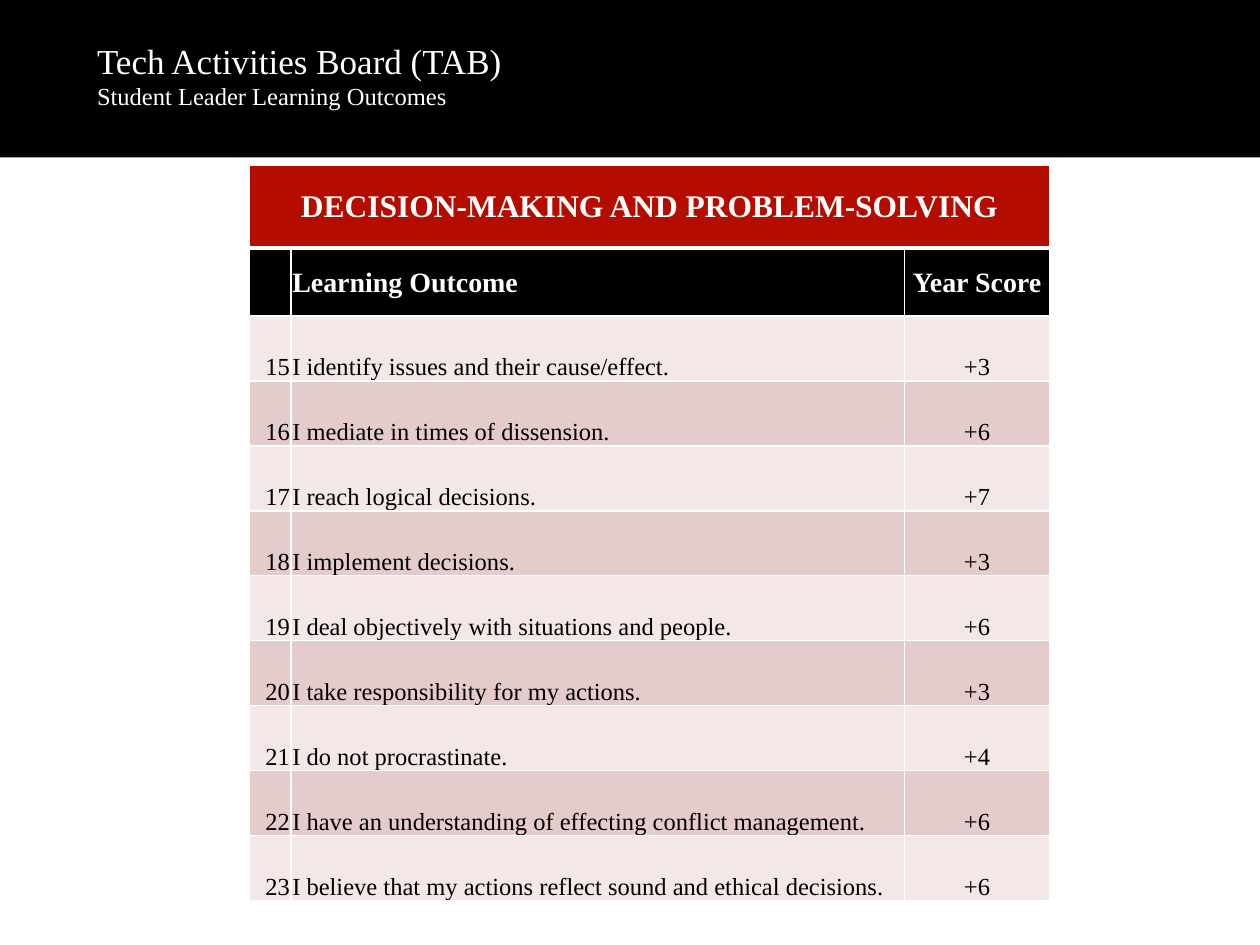
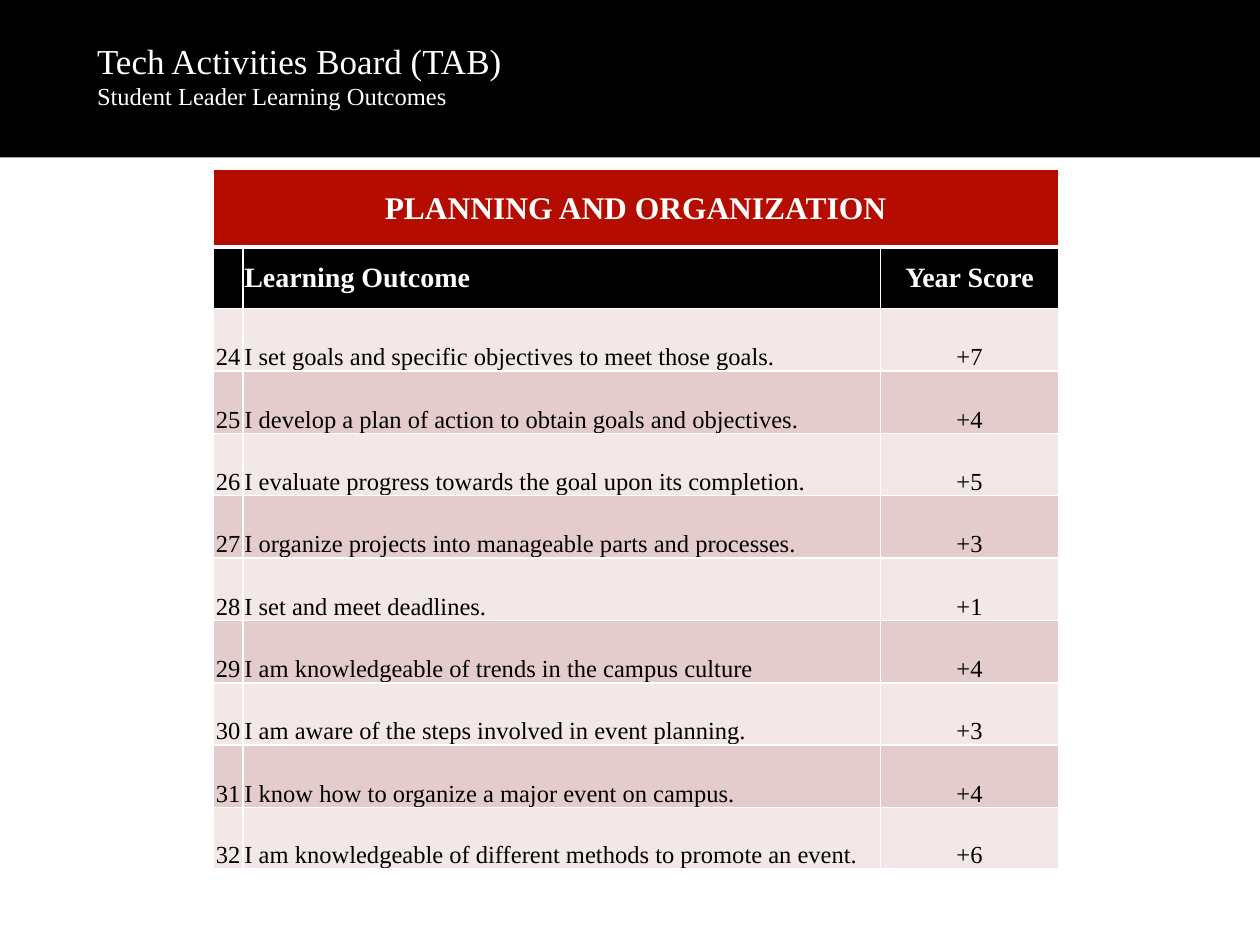
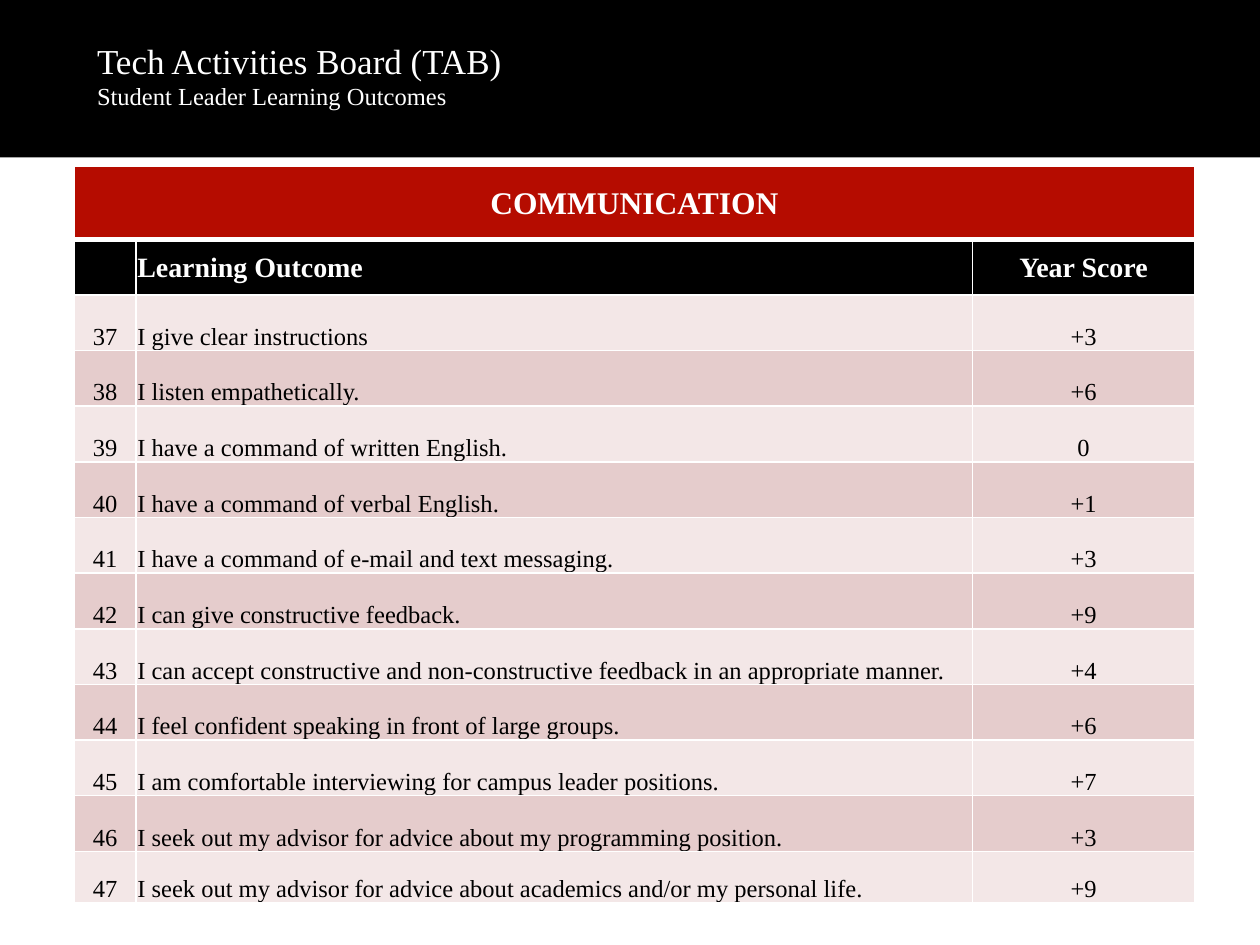
from dataclasses import dataclass
from pptx import Presentation
from pptx.dml.color import RGBColor
from pptx.enum.shapes import MSO_SHAPE
from pptx.enum.text import MSO_ANCHOR, MSO_AUTO_SIZE, PP_ALIGN
from pptx.oxml.ns import qn
from pptx.util import Inches, Pt
from lxml import etree

RECT = MSO_SHAPE.RECTANGLE
MIDDLE, BOTTOM = MSO_ANCHOR.MIDDLE, MSO_ANCHOR.BOTTOM
LEFT, CENTER, RIGHT = PP_ALIGN.LEFT, PP_ALIGN.CENTER, PP_ALIGN.RIGHT
FIT_NONE = MSO_AUTO_SIZE.NONE


@dataclass(frozen=True)
class Theme:
    """Colours, type sizes and line widths of the deck."""
    font: str = "Times New Roman"
    black: str = "000000"
    white: str = "FFFFFF"
    red: str = "B50C00"
    pale: str = "F3E7E7"
    pink: str = "E5CCCC"
    title: int = 20
    topic: int = 18
    label: int = 16
    body: int = 14
    thin: int = 1
    thick: int = 3


@dataclass(frozen=True)
class Topic:
    """One table of scores: its box, sizes and rows."""
    name: str
    box: tuple
    cols: tuple
    head: float
    label: float
    last: float
    first: int
    align: int
    rows: tuple


THEME = Theme()
BAND = (0, 0, 10, 1.25)
TITLE = (0.67, -0.03, 8.22, 1.25)

TOPICS = (
    Topic("DECISION-MAKING AND PROBLEM-SOLVING", (1.98, 1.31, 6.34, 5.84),
          (0.33, 4.87, 1.15), 0.66, 0.54, 0.52, 15, RIGHT, (
              ("I identify issues and their cause/effect.", "+3"),
              ("I mediate in times of dissension.", "+6"),
              ("I reach logical decisions.", "+7"),
              ("I implement decisions.", "+3"),
              ("I deal objectively with situations and people.", "+6"),
              ("I take responsibility for my actions.", "+3"),
              ("I do not procrastinate.", "+4"),
              ("I have an understanding of effecting conflict management.", "+6"),
              ("I believe that my actions reflect sound and ethical decisions.", "+6"))),
    Topic("PLANNING AND ORGANIZATION", (1.69, 1.34, 6.7, 5.56),
          (0.24, 5.06, 1.41), 0.62, 0.49, 0.49, 24, CENTER, (
              ("I set goals and specific objectives to meet those goals.", "+7"),
              ("I develop a plan of action to obtain goals and objectives.", "+4"),
              ("I evaluate progress towards the goal upon its completion.", "+5"),
              ("I organize projects into manageable parts and processes.", "+3"),
              ("I set and meet deadlines.", "+1"),
              ("I am knowledgeable of trends in the campus culture", "+4"),
              ("I am aware of the steps involved in event planning.", "+3"),
              ("I know how to organize a major event on campus.", "+4"),
              ("I am knowledgeable of different methods to promote an event.", "+6"))),
    Topic("COMMUNICATION", (0.59, 1.32, 8.89, 5.85),
          (0.49, 6.64, 1.76), 0.58, 0.44, 0.41, 37, CENTER, (
              ("I give clear instructions", "+3"),
              ("I listen empathetically.", "+6"),
              ("I have a command of written English.", "0"),
              ("I have a command of verbal English.", "+1"),
              ("I have a command of e-mail and text messaging.", "+3"),
              ("I can give constructive feedback.", "+9"),
              ("I can accept constructive and non-constructive feedback"
               " in an appropriate manner.", "+4"),
              ("I feel confident speaking in front of large groups.", "+6"),
              ("I am comfortable interviewing for campus leader positions.", "+7"),
              ("I seek out my advisor for advice about my programming position.", "+3"),
              ("I seek out my advisor for advice about academics"
               " and/or my personal life.", "+9"))),
)


def add_run(para, text, size, color, bold=False):
    """Add one formatted run to a paragraph."""
    run = para.add_run()
    run.text = text
    font = run.font
    font.name, font.size, font.bold = THEME.font, Pt(size), bold
    font.color.rgb = RGBColor.from_string(color)


def add_band(slide, box):
    """Draw the black band behind the title."""
    band = slide.shapes.add_shape(RECT, *map(Inches, box))
    band.shadow.inherit = False
    band.fill.solid()
    band.fill.fore_color.rgb = RGBColor.from_string(THEME.black)
    band.line.fill.background()
    slide.shapes.title.element.addprevious(band.element)


def set_title(slide, box):
    """Place the title and write its two lines."""
    title = slide.shapes.title
    title.left, title.top, title.width, title.height = map(Inches, box)
    frame = title.text_frame
    frame.word_wrap, frame.auto_size = True, FIT_NONE
    frame.vertical_anchor = MIDDLE
    para = frame.paragraphs[0]
    para.alignment = LEFT
    add_run(para, "Tech Activities Board (TAB)", THEME.title, THEME.white)
    para.add_line_break()
    add_run(para, "Student Leader Learning Outcomes", THEME.body, THEME.white)


def set_edges(cell, top, base):
    """Give a cell white borders, with its own top and bottom widths."""
    props = cell._tc.get_or_add_tcPr()
    sides = {"L": THEME.thin, "R": THEME.thin, "T": top, "B": base}
    for side, width in sides.items():
        line = etree.SubElement(props, qn(f"a:ln{side}"), w=str(Pt(width)))
        fill = etree.SubElement(line, qn("a:solidFill"))
        etree.SubElement(fill, qn("a:srgbClr"), val=THEME.white)


def fill_row(row, texts, aligns, fill, size, color, bold, anchor,
             top=THEME.thin, base=THEME.thin):
    """Write and format the cells of one table row."""
    for cell, text, align in zip(row.cells, texts, aligns):
        set_edges(cell, top, base)
        cell.fill.solid()
        cell.fill.fore_color.rgb = RGBColor.from_string(fill)
        cell.margin_left = cell.margin_right = cell.margin_top = Inches(0.01)
        cell.margin_bottom = 0
        cell.vertical_anchor = anchor
        if text:
            para = cell.text_frame.paragraphs[0]
            para.alignment = align
            add_run(para, text, size, color, bold)


def add_scores(slide, topic):
    """Build the score table of a topic in its box."""
    count = len(topic.rows)
    table = slide.shapes.add_table(count + 2, 3, *map(Inches, topic.box)).table
    table.first_row = table.horz_banding = False
    for col, width in zip(table.columns, topic.cols):
        col.width = Inches(width)
    step = (topic.box[3] - topic.head - topic.label - topic.last) / (count - 1)
    tall = [topic.head, topic.label] + [step] * (count - 1) + [topic.last]
    for row, height in zip(table.rows, tall):
        row.height = Inches(height)

    head, label, *body = table.rows
    table.cell(0, 0).merge(table.cell(0, 2))
    fill_row(head, (topic.name, "", ""), (CENTER,) * 3, THEME.red,
             THEME.topic, THEME.white, True, MIDDLE, base=THEME.thick)
    fill_row(label, ("", "Learning Outcome", "Year Score"), (LEFT, LEFT, CENTER),
             THEME.black, THEME.label, THEME.white, True, MIDDLE, top=THEME.thick)
    for i, (row, pair) in enumerate(zip(body, topic.rows)):
        fill_row(row, (str(topic.first + i), *pair), (topic.align, LEFT, CENTER),
                 THEME.pink if i % 2 else THEME.pale,
                 THEME.body, THEME.black, False, BOTTOM)


def add_page(deck, topic):
    """Add one slide with band, title and score table."""
    slide = deck.slides.add_slide(deck.slide_layouts.get_by_name("Title Only"))
    add_band(slide, BAND)
    set_title(slide, TITLE)
    add_scores(slide, topic)


def main():
    """Build and save the deck."""
    deck = Presentation()
    deck.slide_width, deck.slide_height = Inches(10), Inches(7.5)
    for topic in TOPICS:
        add_page(deck, topic)
    deck.save("out.pptx")


if __name__ == "__main__":
    main()
